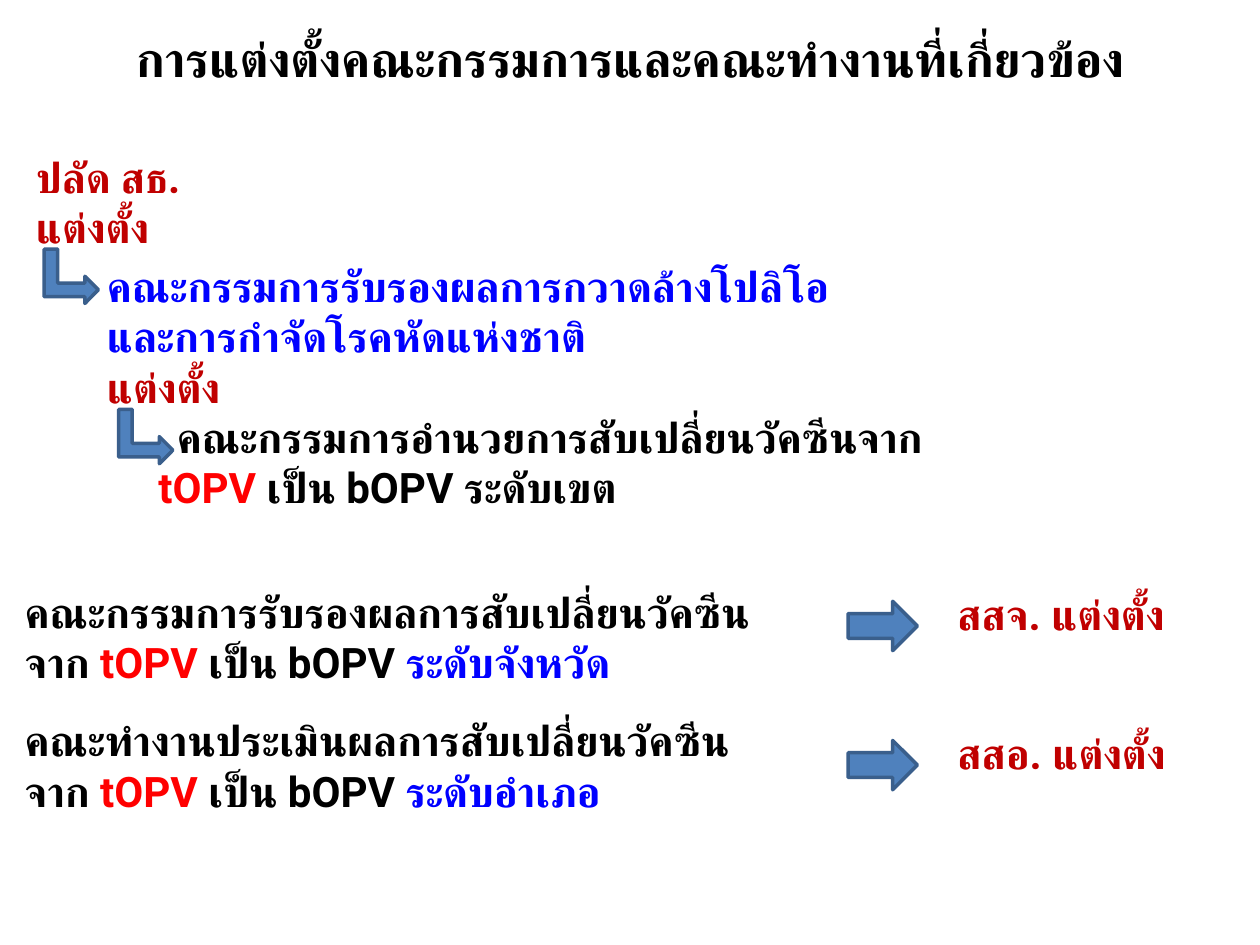
from lxml import etree
from pptx import Presentation
from pptx.dml.color import RGBColor
from pptx.enum.shapes import MSO_SHAPE
from pptx.enum.text import MSO_ANCHOR, PP_ALIGN
from pptx.oxml.ns import qn
from pptx.util import Pt

FONT = "Roboto"
BLACK = RGBColor(0, 0, 0)
DARK_RED = RGBColor(0xC0, 0, 0)
RED = RGBColor(0xFF, 0, 0)
BLUE = RGBColor(0, 0, 0xFF)
ARROW_FILL = RGBColor(0x4F, 0x81, 0xBD)
ARROW_LINE = RGBColor(0x3A, 0x5F, 0x8C)
BENT_ARROW = MSO_SHAPE.BENT_UP_ARROW
RIGHT_ARROW = MSO_SHAPE.RIGHT_ARROW
CENTER = PP_ALIGN.CENTER
MIDDLE = MSO_ANCHOR.MIDDLE


def add_text(left, top, width, height, lines, size=24):
    box = slide.shapes.add_textbox(Pt(left), Pt(top), Pt(width), Pt(height))
    frame = box.text_frame
    frame.word_wrap = True
    for number, (indent, space, spans) in enumerate(lines):
        para = frame.add_paragraph() if number else frame.paragraphs[0]
        para.space_before = Pt(space)
        properties = para._p.get_or_add_pPr()
        properties.set("marL", str(Pt(indent)))
        properties.set("indent", "0")
        for text, color in spans:
            span = para.add_run()
            span.text = text
            span.font.size = Pt(size)
            span.font.bold = True
            span.font.name = FONT
            span.font.color.rgb = color
            complex_font = etree.SubElement(span._r.get_or_add_rPr(), qn("a:cs"))
            complex_font.set("typeface", FONT)
    return frame


def add_arrow(kind, left, top, width, height, rotation=0):
    arrow = slide.shapes.add_shape(kind, Pt(left), Pt(top), Pt(width), Pt(height))
    arrow.rotation = rotation
    arrow.shadow.inherit = False
    arrow.fill.solid()
    arrow.fill.fore_color.rgb = ARROW_FILL
    arrow.line.color.rgb = ARROW_LINE
    arrow.line.width = Pt(2)


deck = Presentation()
deck.slide_width = Pt(720)
deck.slide_height = Pt(540)
slide = deck.slides.add_slide(deck.slide_layouts[6])

title = add_text(0, 0, 720, 66, [
    (0, 0, [("การแต่งตั้งคณะกรรมการและคณะทำงานที่เกี่ยวข้อง", BLACK)]),
], size=28)
title.vertical_anchor = MIDDLE
title.paragraphs[0].alignment = CENTER

add_text(0, 82.8, 720, 215, [
    (13.4, 4.8, [("ปลัด สธ.", DARK_RED)]),
    (13.4, 0, [("แต่งตั้ง", DARK_RED)]),
    (54, 4.8, [("คณะกรรมการรับรองผลการกวาดล้างโปลิโอ", BLUE)]),
    (54, 0, [("และการกำจัดโรคหัดแห่งชาติ", BLUE)]),
    (54, 0, [("แต่งตั้ง", DARK_RED)]),
    (94, 0, [("คณะกรรมการอำนวยการสับเปลี่ยนวัคซีนจาก", BLACK)]),
    (83.5, 0, [("tOPV ", RED), ("เป็น bOPV ระดับเขต", BLACK)]),
])

levels = [
    ("คณะกรรมการรับรองผลการสับเปลี่ยนวัคซีน", "ระดับจังหวัด", 4.8),
    ("คณะทำงานประเมินผลการสับเปลี่ยนวัคซีน", "ระดับอำเภอ", 16),
]
level_lines = []
for group, level, space in levels:
    level_lines.append((7, space, [(group, BLACK)]))
    level_lines.append((7, 0, [
        ("จาก ", BLACK), ("tOPV ", RED), ("เป็น bOPV ", BLACK), (level, BLUE),
    ]))
add_text(0, 331.4, 720, 187, level_lines)

for left, top in [(25.2, 142.4), (67.8, 234)]:
    add_arrow(BENT_ARROW, left, top, 31, 31, rotation=90)

for row, office in enumerate(["สสจ. แต่งตั้ง", "สสอ. แต่งตั้ง"]):
    offset = row * 79.5
    add_text(540, 332.6 + offset, 154, 36, [(0, 0, [(office, DARK_RED)])])
    add_arrow(RIGHT_ARROW, 484.6, 343.6 + offset, 39.6, 28.2)

deck.save("out.pptx")
